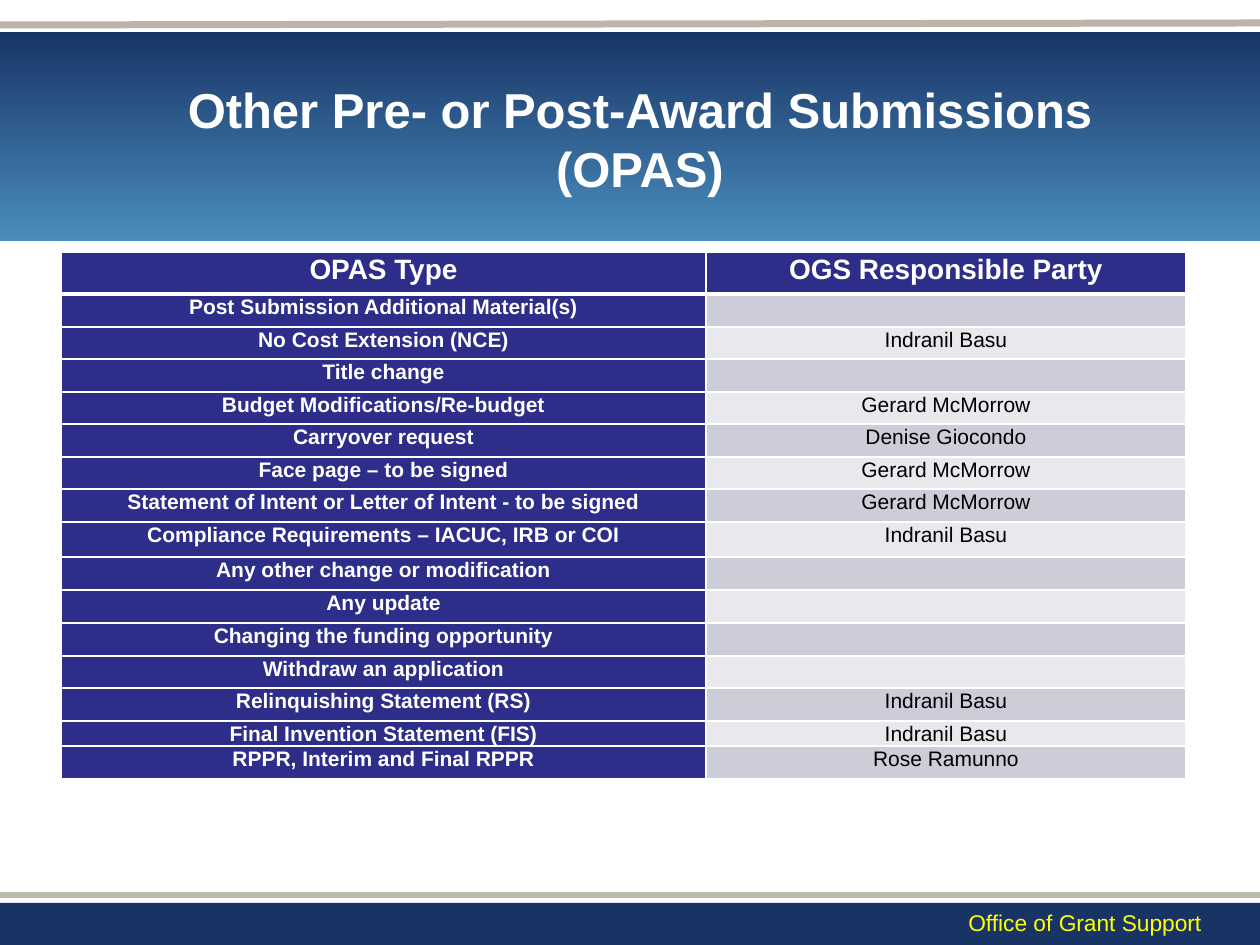
from lxml import etree
from pptx import Presentation
from pptx.dml.color import RGBColor
from pptx.enum.shapes import MSO_CONNECTOR, MSO_SHAPE
from pptx.enum.text import MSO_ANCHOR, PP_ALIGN
from pptx.oxml.ns import qn
from pptx.util import Emu, Pt

RECTANGLE = MSO_SHAPE.RECTANGLE
STRAIGHT = MSO_CONNECTOR.STRAIGHT
CENTER, LEFT = PP_ALIGN.CENTER, PP_ALIGN.LEFT
MIDDLE = MSO_ANCHOR.MIDDLE
FONT = "Arial"
SLIDE_W, SLIDE_H = 1260, 945
COLORS = {
    "white": "FFFFFF", "black": "000000", "yellow": "FFFF00",
    "navy": "183465", "band_top": "193567", "band_bottom": "498DBD",
    "top_rule": "BCB3A9", "bottom_rule": "BBBCA9",
    "type": "2D2D8A", "odd": "CDCDDA", "even": "E8E8ED",
}
HEADER = ("OPAS Type", "OGS Responsible Party")
SUBMISSIONS = [
    ("Post Submission Additional Material(s)", ""),
    ("No Cost Extension (NCE)", "Indranil Basu"),
    ("Title change", ""),
    ("Budget Modifications/Re-budget", "Gerard McMorrow"),
    ("Carryover request", "Denise Giocondo"),
    ("Face page – to be signed", "Gerard McMorrow"),
    ("Statement of Intent or Letter of Intent - to be signed", "Gerard McMorrow"),
    ("Compliance Requirements – IACUC, IRB or COI", "Indranil Basu"),
    ("Any other change or modification", ""),
    ("Any update", ""),
    ("Changing the funding opportunity", ""),
    ("Withdraw an application", ""),
    ("Relinquishing Statement (RS)", "Indranil Basu"),
    ("Final Invention Statement (FIS)", "Indranil Basu"),
    ("RPPR, Interim and Final RPPR", "Rose Ramunno"),
]
COLUMN_WIDTHS = (645, 480)
ROW_HEIGHTS = (42, 33, 32, 33, 32, 33, 32, 33, 35, 33, 33, 33, 32, 33, 25, 33)


def px(length):
    """Turn pixels into EMU."""
    return Emu(round(length * 914400 / 126))


def rgb(name):
    """Look up a named colour."""
    return RGBColor.from_string(COLORS[name])


def add_run(paragraph, text, size, color, bold=False, align=CENTER):
    """Add one formatted run to an aligned paragraph."""
    paragraph.alignment = align
    run = paragraph.add_run()
    run.text = text
    run.font.name = FONT
    run.font.size = Pt(size)
    run.font.bold = bold
    run.font.color.rgb = rgb(color)


def add_band(slide, left, top, width, height):
    """Add a plain navy rectangle without outline or shadow."""
    band = slide.shapes.add_shape(RECTANGLE, px(left), px(top), px(width), px(height))
    band.shadow.inherit = False
    band.line.fill.background()
    band.fill.solid()
    band.fill.fore_color.rgb = rgb("navy")
    return band


def add_rule(slide, left, top, right, bottom, color, weight):
    """Add a straight coloured rule without shadow."""
    rule = slide.shapes.add_connector(STRAIGHT, px(left), px(top), px(right), px(bottom))
    rule.line.color.rgb = rgb(color)
    rule.line.width = Pt(weight)
    etree.SubElement(rule._element.spPr, qn("a:effectLst"))


def build_heading(slide, left, top, width, height):
    """Build the gradient band, its rule and the title."""
    band = add_band(slide, left, top, width, height)
    band.fill.gradient()
    band.fill.gradient_angle = 270
    for stop, color in zip(band.fill.gradient_stops, ("band_top", "band_bottom")):
        stop.color.rgb = rgb(color)
    add_rule(slide, left, top - 7, left + width, top - 9, "top_rule", 4)
    title = slide.shapes.title
    title.left, title.top = px(left + 94), px(top + 36)
    title.width, title.height = px(width - 168), px(141)
    title.text_frame.word_wrap = True
    title.text_frame.vertical_anchor = MIDDLE
    add_run(title.text_frame.paragraphs[0],
            "Other Pre- or Post-Award Submissions (OPAS)", 28, "white", True)
    slide.shapes._spTree.append(title._element)


def add_borders(cell, bottom_weight):
    """Add white borders to a cell ahead of its fill."""
    properties = cell._tc.get_or_add_tcPr()
    weights = {"a:lnL": 1, "a:lnR": 1, "a:lnT": 1, "a:lnB": bottom_weight}
    for side, weight in weights.items():
        border = etree.SubElement(properties, qn(side), w=str(Pt(weight)))
        fill = etree.SubElement(border, qn("a:solidFill"))
        etree.SubElement(fill, qn("a:srgbClr"), val=COLORS["white"])


def fill_cell(cell, text, size, color, fill, bold, bottom_weight):
    """Format one table cell and write its text."""
    cell.margin_left = cell.margin_right = px(8)
    cell.margin_top = cell.margin_bottom = 0
    add_borders(cell, bottom_weight)
    cell.fill.solid()
    cell.fill.fore_color.rgb = rgb(fill)
    paragraph = cell.text_frame.paragraphs[0]
    paragraph.line_spacing = 1.07
    if text:
        add_run(paragraph, text, size, color, bold)
    else:
        etree.SubElement(paragraph._p, qn("a:endParaRPr"), sz=str(size * 100))


def build_submissions(slide, left, top, width, height):
    """Build the table of submission types and responsible parties."""
    table = slide.shapes.add_table(len(SUBMISSIONS) + 1, len(HEADER), px(left),
                                   px(top), px(width), px(height)).table
    table.first_row = table.horz_banding = False
    for column, column_width in zip(table.columns, COLUMN_WIDTHS):
        column.width = px(column_width)
    for row, row_height in zip(table.rows, ROW_HEIGHTS):
        row.height = px(row_height)
    for column, heading in enumerate(HEADER):
        fill_cell(table.cell(0, column), heading, 16, "white", "type", True, 3)
    for row, (submission, party) in enumerate(SUBMISSIONS, 1):
        shade = "odd" if row % 2 else "even"
        fill_cell(table.cell(row, 0), submission, 12, "white", "type", True, 1)
        fill_cell(table.cell(row, 1), party, 12, "black", shade, False, 1)
    for column in range(len(HEADER)):
        top_border = table.cell(1, column)._tc.tcPr.find(qn("a:lnT"))
        top_border.set("w", str(Pt(3)))


def build_footer(slide, left, top, width, height):
    """Build the bottom band, its rule and the office name."""
    add_band(slide, left, top, width, height)
    add_rule(slide, left, top - 8, left + width, top - 8, "bottom_rule", 3)
    office = slide.shapes.add_textbox(px(left + width - 304), px(top), px(262), px(40))
    office.text_frame.word_wrap = False
    add_run(office.text_frame.paragraphs[0], "Office of Grant Support", 13,
            "yellow", align=LEFT)


def main():
    """Build and save the presentation."""
    presentation = Presentation()
    presentation.slide_width, presentation.slide_height = px(SLIDE_W), px(SLIDE_H)
    slide = presentation.slides.add_slide(presentation.slide_layouts[5])
    build_heading(slide, 0, 32, SLIDE_W, 209)
    build_submissions(slide, 61, 252, sum(COLUMN_WIDTHS), sum(ROW_HEIGHTS))
    build_footer(slide, 0, 903, SLIDE_W, 42)
    presentation.save("out.pptx")


if __name__ == "__main__":
    main()
